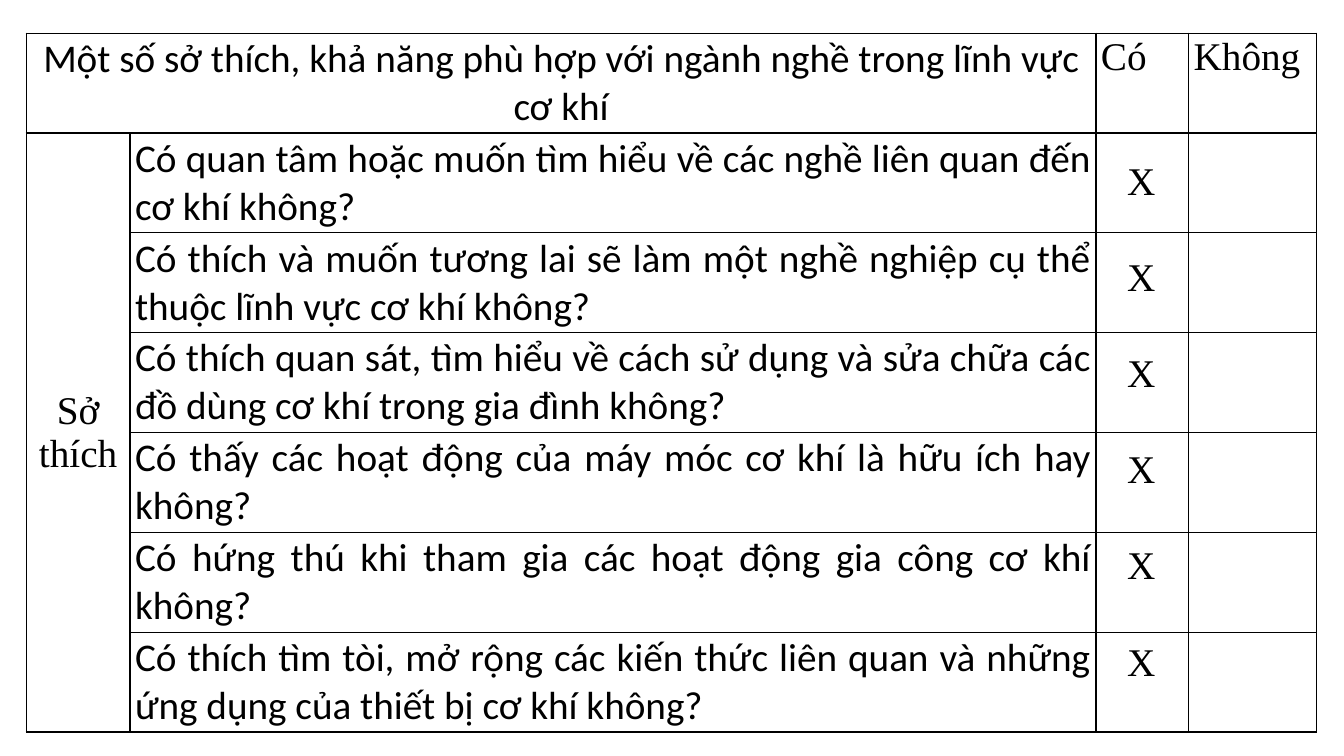
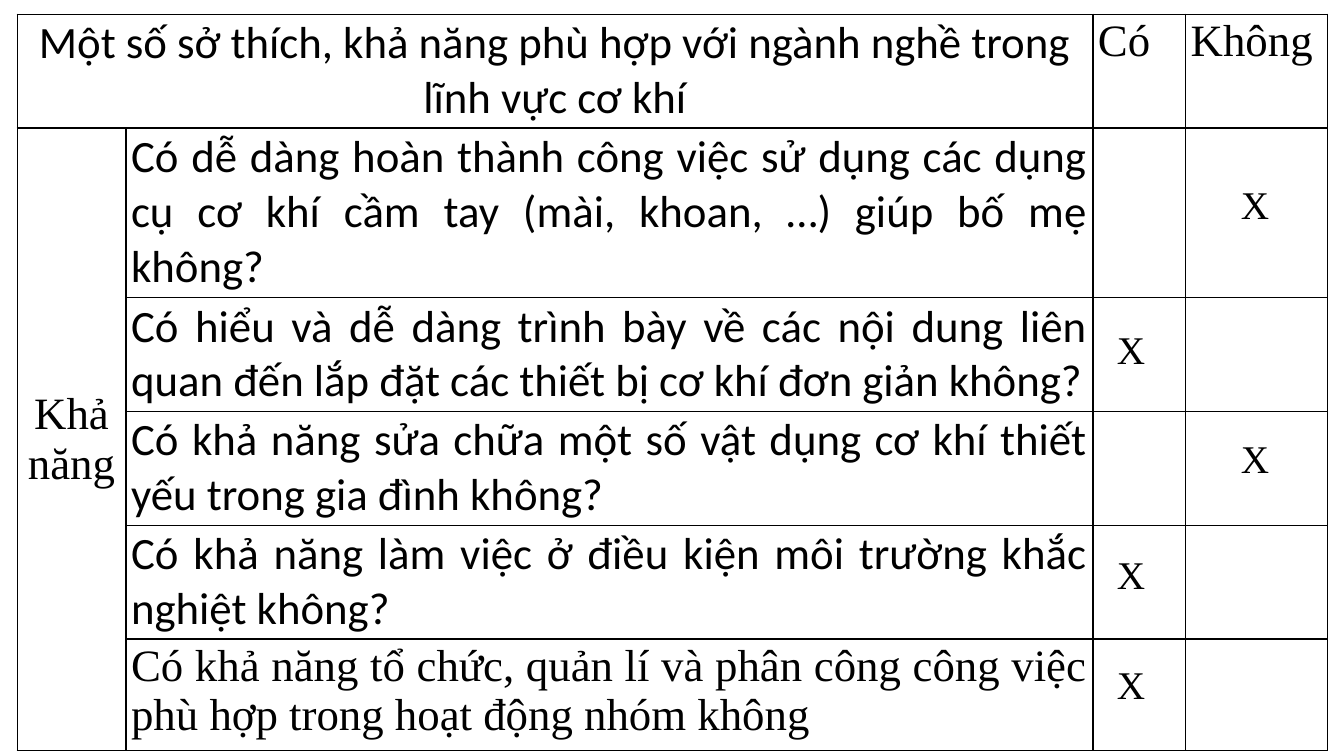
from lxml.etree import SubElement
from pptx import Presentation
from pptx.dml.color import RGBColor
from pptx.enum.text import MSO_ANCHOR, MSO_AUTO_SIZE, PP_ALIGN
from pptx.oxml.ns import qn
from pptx.util import Inches, Pt

BLACK = "000000"
SANS, SERIF = "Calibri", "Times New Roman"
HEAD = "Một số sở thích, khả năng phù hợp với ngành nghề trong lĩnh vực cơ khí"

LIKES = [
    "Có quan tâm hoặc muốn tìm hiểu về các nghề liên quan đến cơ khí không?",
    "Có thích và muốn tương lai sẽ làm một nghề nghiệp cụ thể thuộc lĩnh vực cơ khí không?",
    "Có thích quan sát, tìm hiểu về cách sử dụng và sửa chữa các đồ dùng cơ khí trong gia đình không?",
    "Có thấy các hoạt động của máy móc cơ khí là hữu ích hay không?",
    "Có hứng thú khi tham gia các hoạt động gia công cơ khí không?",
    "Có thích tìm tòi, mở rộng các kiến thức liên quan và những ứng dụng của thiết bị cơ khí không?",
]
SKILLS = [
    "Có dễ dàng hoàn thành công việc sử dụng các dụng cụ cơ khí cầm tay (mài, khoan, …) giúp bố mẹ không?",
    "Có hiểu và dễ dàng trình bày về các nội dung liên quan đến lắp đặt các thiết bị cơ khí đơn giản không?",
    "Có khả năng sửa chữa một số vật dụng cơ khí thiết yếu trong gia đình không?",
    "Có khả năng làm việc ở điều kiện môi trường khắc nghiệt không?",
    "Có khả năng tổ chức, quản lí và phân công công việc phù hợp trong hoạt động nhóm không",
]


def color(code):
    return RGBColor.from_string(code)


def write(frame, text, size=28, font=SERIF, align=PP_ALIGN.LEFT, ink=BLACK):
    para = frame.paragraphs[0]
    para.alignment = align
    run = para.add_run()
    run.text = text
    run.font.size = Pt(size)
    run.font.name = font
    run.font.color.rgb = color(ink)


class Deck:
    def __init__(self):
        self.prs = Presentation()
        self.prs.slide_width = Inches(13.33)
        self.prs.slide_height = Inches(7.5)

    def start(self):
        blank = self.prs.slide_layouts[6]
        self.slide = self.prs.slides.add_slide(blank)

    def style(self, cell):
        """Give a cell thin margins, black borders and no fill."""
        cell.margin_left = cell.margin_right = Inches(0.05)
        cell.margin_top = cell.margin_bottom = Inches(0.02)
        props = cell._tc.get_or_add_tcPr()
        for side in ("lnL", "lnR", "lnT", "lnB"):
            line = SubElement(props, qn(f"a:{side}"), w=str(Pt(1)))
            fill = SubElement(line, qn("a:solidFill"))
            SubElement(fill, qn("a:srgbClr"), val=BLACK)
        cell.fill.background()

    def survey(self, left, top, cols, rows, group, asks, size, fonts):
        """Draw a table of questions under one heading, beside one group name."""
        frame = self.slide.shapes.add_table(
            len(rows), len(cols), Inches(left), Inches(top),
            Inches(sum(cols)), Inches(sum(rows)))
        table = frame.table
        table.first_row = table.horz_banding = False
        for col, width in zip(table.columns, cols):
            col.width = Inches(width)
        for row, height in zip(table.rows, rows):
            row.height = Inches(height)
        for cell in table.iter_cells():
            self.style(cell)
        table.cell(0, 0).merge(table.cell(0, 1))
        table.cell(1, 0).merge(table.cell(len(asks), 0))
        table.cell(1, 0).vertical_anchor = MSO_ANCHOR.MIDDLE

        def put(row, col, text, font=SERIF, align=PP_ALIGN.JUSTIFY):
            write(table.cell(row, col).text_frame, text,
                  size=size, font=font, align=align)

        put(0, 0, HEAD, SANS, PP_ALIGN.CENTER)
        put(0, 2, "Có")
        put(0, 3, "Không")
        put(1, 0, group, align=PP_ALIGN.CENTER)
        for row, (ask, font) in enumerate(zip(asks, fonts), 1):
            put(row, 1, ask, font)

    def mark(self, left, top):
        box = self.slide.shapes.add_textbox(
            Inches(left), Inches(top), Inches(0.33), Inches(0.57))
        frame = box.text_frame
        frame.word_wrap = True
        frame.auto_size = MSO_AUTO_SIZE.SHAPE_TO_FIT_TEXT
        write(frame, "X")


def main():
    deck = Deck()

    deck.start()
    deck.survey(0.26, 0.33, [1.03, 9.58, 0.92, 1.27], [0.99] * 7,
                "Sở thích", LIKES, 28, [SANS] * 6)
    first, last = 1.5, 6.27
    step = (last - first) / (len(LIKES) - 1)
    for row in range(len(LIKES)):
        deck.mark(11.08, first + row * step)

    deck.start()
    deck.survey(0.17, 0.14, [1.08, 9.59, 0.92, 1.41],
                [1.13, 1.68, 1.13, 1.13, 1.13, 1.03],
                "Khả năng", SKILLS, 32, [SANS] * 4 + [SERIF])
    yes, no = 10.98, 12.21
    for left, top in zip([no, yes, no, yes, yes],
                         [1.74, 3.18, 4.26, 5.41, 6.5]):
        deck.mark(left, top)

    deck.prs.save("out.pptx")


if __name__ == "__main__":
    main()
